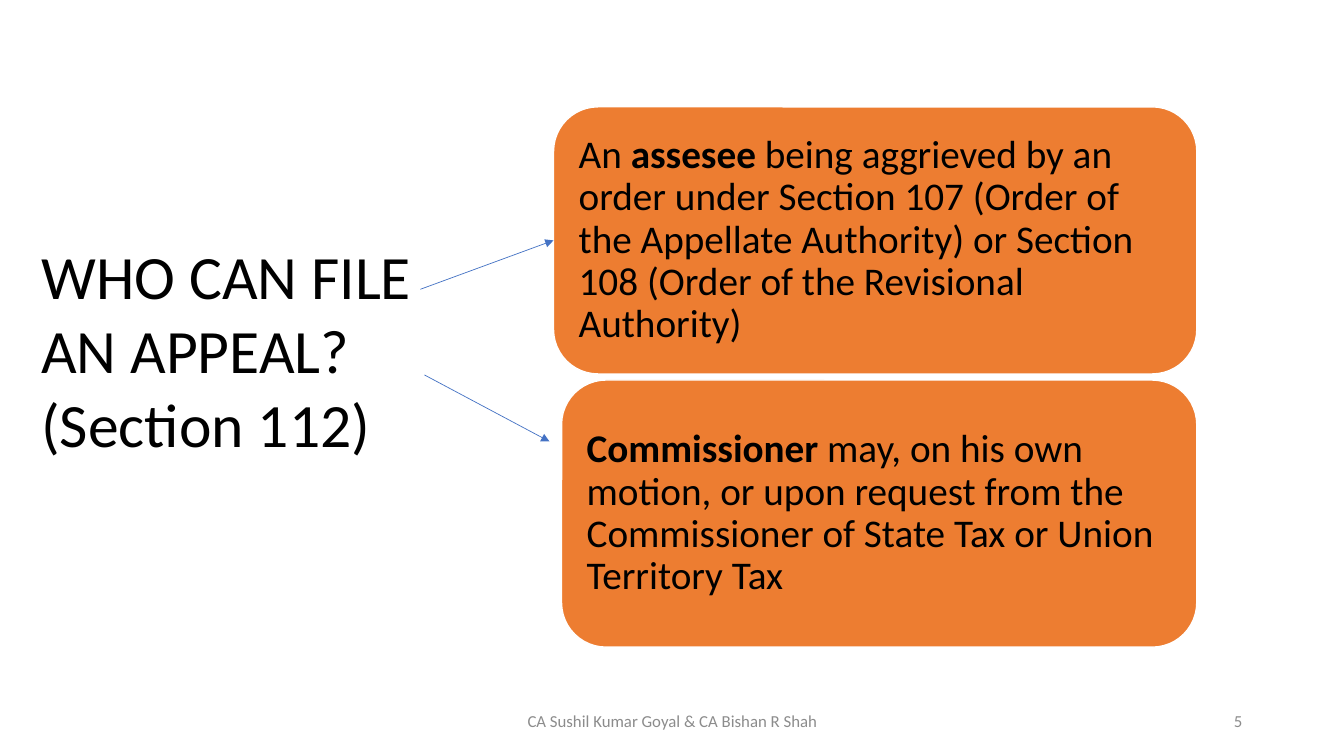
from lxml.etree import SubElement
from pptx import Presentation
from pptx.dml.color import RGBColor
from pptx.enum.shapes import MSO_CONNECTOR, MSO_SHAPE
from pptx.enum.text import MSO_ANCHOR, MSO_AUTO_SIZE, PP_ALIGN
from pptx.oxml.ns import qn
from pptx.util import Inches, Pt

FONT = "Calibri"
BLACK, WHITE, ORANGE, BLUE, GRAY = "000000", "FFFFFF", "ED7D31", "4472C4", "8C8C8C"

TITLE_LINES = ["WHO CAN FILE AN APPEAL?", "(Section 112)"]
# Each box: left edge, then text pieces with their bold flag
APPELLANTS = [
    (5.49, [("An ", False), ("assesee", True),
            (" being aggrieved by an order under Section 107 (Order of the Appellate "
             "Authority) or Section 108 (Order of the Revisional Authority)", False)]),
    (5.57, [("Commissioner", True),
            (" may, on his own motion, or upon request from the Commissioner of "
             "State Tax or Union Territory Tax", False)]),
]
BOX_TOP, BOX_RIGHT, BOX_HEIGHT, BOX_PITCH = 1.06, 11.87, 2.65, 2.71
ARROWS = [((4.17, 2.87), (5.49, 2.38)), ((4.21, 3.72), (5.45, 4.38))]
# Footer: text, left, width, alignment
FOOTERS = [
    ("CA Sushil Kumar Goyal & CA Bishan R Shah", 4.42, 4.5, PP_ALIGN.CENTER),
    ("5", 9.42, 3, PP_ALIGN.RIGHT),
]


def color(value):
    return RGBColor.from_string(value)


def format_run(run, size, value, bold=False):
    run.font.name = FONT
    run.font.size = Pt(size)
    run.font.bold = bold
    run.font.color.rgb = color(value)


def add_title(slide):
    title = slide.shapes.title
    title.left, title.top = Inches(0.31), Inches(2.31)
    title.width, title.height = Inches(4.67), Inches(2.32)
    frame = title.text_frame
    frame.text = "\n".join(TITLE_LINES)
    frame.word_wrap = True
    frame.auto_size = MSO_AUTO_SIZE.NONE
    frame.vertical_anchor = MSO_ANCHOR.TOP
    for paragraph in frame.paragraphs:
        paragraph.alignment = PP_ALIGN.LEFT
        paragraph.line_spacing = 1.0
        format_run(paragraph.runs[0], 44, BLACK)


def add_box(slide, left, top, pieces):
    box = slide.shapes.add_shape(
        MSO_SHAPE.ROUNDED_RECTANGLE, Inches(left), Inches(top),
        Inches(BOX_RIGHT - left), Inches(BOX_HEIGHT))
    box.shadow.inherit = False
    box.fill.solid()
    box.fill.fore_color.rgb = color(ORANGE)
    box.line.color.rgb = color(WHITE)
    box.line.width = Pt(1)
    frame = box.text_frame
    frame.word_wrap = True
    frame.vertical_anchor = MSO_ANCHOR.MIDDLE
    frame.margin_left = frame.margin_right = Inches(0.12)
    frame.margin_top = frame.margin_bottom = Inches(0.12)
    paragraph = frame.paragraphs[0]
    paragraph.alignment = PP_ALIGN.LEFT
    paragraph.line_spacing = 0.9
    for text, bold in pieces:
        run = paragraph.add_run()
        run.text = text
        format_run(run, 28, BLACK, bold)
    return box


def add_arrow(slide, start, end):
    arrow = slide.shapes.add_connector(
        MSO_CONNECTOR.STRAIGHT, *[Inches(value) for value in start + end])
    arrow.line.color.rgb = color(BLUE)
    arrow.line.width = Pt(0.5)
    SubElement(arrow.line._get_or_add_ln(), qn("a:tailEnd"), type="triangle")
    SubElement(arrow._element.spPr, qn("a:effectLst"))
    return arrow


def add_footer(slide, text, left, width, alignment):
    footer = slide.shapes.add_textbox(Inches(left), Inches(6.95), Inches(width), Inches(0.4))
    frame = footer.text_frame
    frame.text = text
    frame.word_wrap = True
    frame.vertical_anchor = MSO_ANCHOR.MIDDLE
    frame.paragraphs[0].alignment = alignment
    format_run(frame.paragraphs[0].runs[0], 12, GRAY)


def main():
    presentation = Presentation()
    presentation.slide_width, presentation.slide_height = Inches(13.33), Inches(7.5)
    slide = presentation.slides.add_slide(presentation.slide_layouts[5])

    add_title(slide)

    # Stacked boxes sharing a right edge
    boxes = [add_box(slide, left, BOX_TOP + index * BOX_PITCH, pieces)
             for index, (left, pieces) in enumerate(APPELLANTS)]

    # Arrows from the question; only the first touches its box
    arrows = [add_arrow(slide, start, end) for start, end in ARROWS]
    arrows[0].end_connect(boxes[0], 1)

    for footer in FOOTERS:
        add_footer(slide, *footer)

    presentation.save("out.pptx")


if __name__ == "__main__":
    main()
